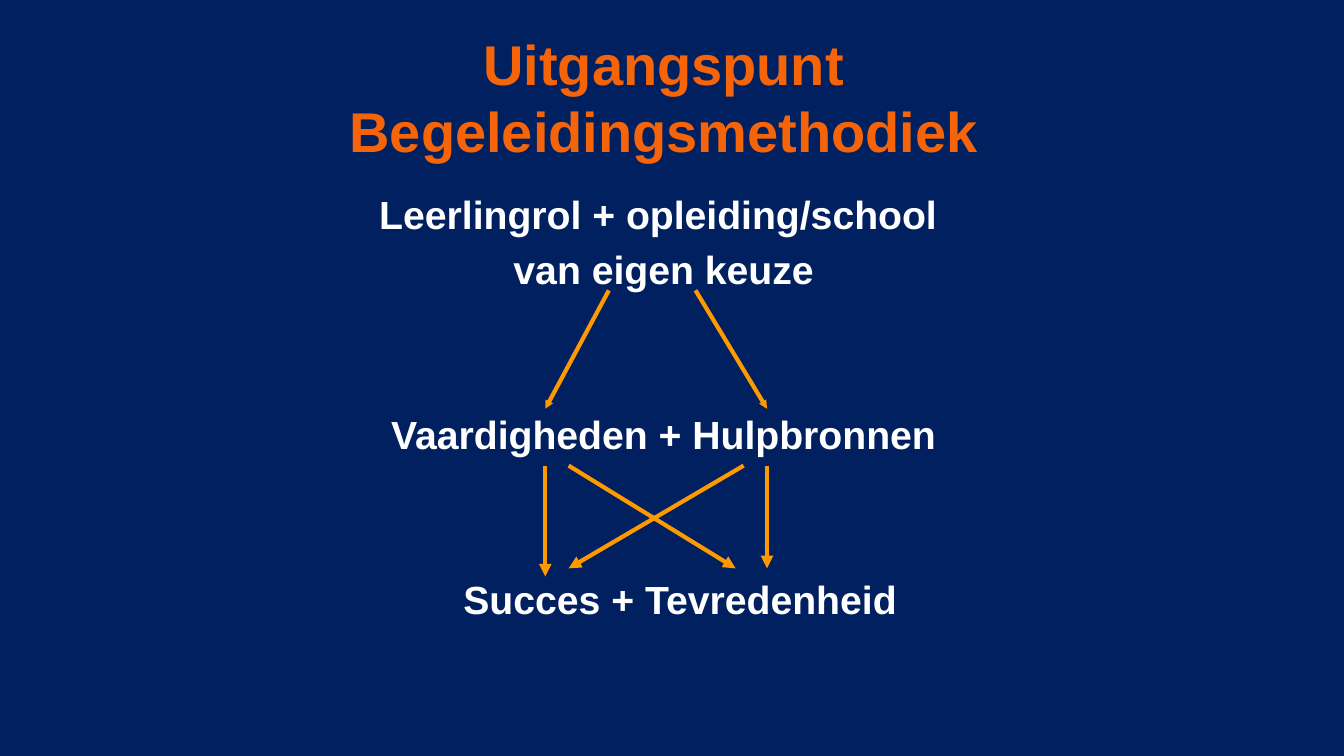
from dataclasses import dataclass

import pptx
import pptx.dml.color
import pptx.enum.shapes
import pptx.enum.text
import pptx.oxml
import pptx.oxml.ns
import pptx.util
from lxml import etree

Pt = pptx.util.Pt
COLOURS = {
    "background": "002060",
    "title": "F6640A",
    "text": "FFFFFF",
    "arrow": "FF9900",
}
FONT = "Arial"


@dataclass(frozen=True)
class Line:
    text: str
    space_before: float = 0
    left_margin: float = 0
    right_margin: float = 0


@dataclass(frozen=True)
class Arrow:
    start: tuple[float, float]
    end: tuple[float, float]
    head: str = "med"


TITLE = [Line("Uitgangspunt Begeleidingsmethodiek")]
LEVELS = [
    Line("Leerlingrol + opleiding/school", right_margin=7.8),
    Line("van eigen keuze", 5.7),
    Line("Vaardigheden + Hulpbronnen", 84.3),
    Line("Succes + Tevredenheid", 84.3, left_margin=23.4),
]

ROLE_BOTTOM = 207.4
SKILLS_TOP, SKILLS_BOTTOM = 292, 332.6
RESULT_TOP = 406
SKILLS_X, RESOURCES_X = 389.5, 547.9
ARROWS = [
    Arrow((496.8, ROLE_BOTTOM), (RESOURCES_X, SKILLS_TOP), "sm"),
    Arrow((434.9, ROLE_BOTTOM), (SKILLS_X, SKILLS_TOP), "sm"),
    Arrow((SKILLS_X, SKILLS_BOTTOM), (SKILLS_X, 411.8)),
    Arrow((RESOURCES_X, SKILLS_BOTTOM), (RESOURCES_X, RESULT_TOP)),
    Arrow((531.2, SKILLS_BOTTOM), (406.2, RESULT_TOP)),
    Arrow((406.2, SKILLS_BOTTOM), (525.5, RESULT_TOP)),
]


def rgb(name: str) -> pptx.dml.color.RGBColor:
    return pptx.dml.color.RGBColor.from_string(COLOURS[name])


def fill_placeholder(shape, top: float, height: float, lines: list[Line],
                     size: float, line_spacing: float, colour: str) -> None:
    shape.left, shape.top = Pt(168), Pt(top)
    shape.width, shape.height = Pt(612), Pt(height)
    text_frame = shape.text_frame
    text_frame.word_wrap = True
    text_frame.auto_size = pptx.enum.text.MSO_AUTO_SIZE.NONE
    text_frame.text = "\n".join(line.text for line in lines)
    for paragraph, line in zip(text_frame.paragraphs, lines):
        paragraph.alignment = pptx.enum.text.PP_ALIGN.CENTER
        paragraph.line_spacing = Pt(line_spacing)
        paragraph.space_before = Pt(line.space_before)
        properties = paragraph._p.get_or_add_pPr()
        properties.set("marL", str(Pt(line.left_margin)))
        properties.set("marR", str(Pt(line.right_margin)))
        properties.set("indent", "0")
        etree.SubElement(properties, pptx.oxml.ns.qn("a:buNone"))
        for run in paragraph.runs:
            run.font.name = FONT
            run.font.size = Pt(size)
            run.font.bold = True
            run.font.color.rgb = rgb(colour)


def draw_arrow(slide, arrow: Arrow) -> None:
    connector = slide.shapes.add_connector(
        pptx.enum.shapes.MSO_CONNECTOR.STRAIGHT,
        *(Pt(value) for value in arrow.start + arrow.end))
    connector.line.color.rgb = rgb("arrow")
    connector.line.width = Pt(3)
    etree.SubElement(connector.line._get_or_add_ln(), pptx.oxml.ns.qn("a:tailEnd"),
                     type="triangle", w=arrow.head, len=arrow.head)
    etree.SubElement(connector._element.spPr, pptx.oxml.ns.qn("a:effectLst"))


def main() -> None:
    presentation = pptx.Presentation()
    presentation.slide_width, presentation.slide_height = Pt(960), Pt(540)
    slide = presentation.slides.add_slide(presentation.slide_layouts[1])
    slide.background.fill.solid()
    slide.background.fill.fore_color.rgb = rgb("background")

    title, body = slide.placeholders
    fill_placeholder(title, 30, 78, TITLE, 40, 48, "title")
    title.text_frame.vertical_anchor = pptx.enum.text.MSO_ANCHOR.MIDDLE
    fill_placeholder(body, 132, 324, LEVELS, 28, 33.6, "text")
    for arrow in ARROWS:
        draw_arrow(slide, arrow)
    presentation.save("out.pptx")


if __name__ == "__main__":
    main()
